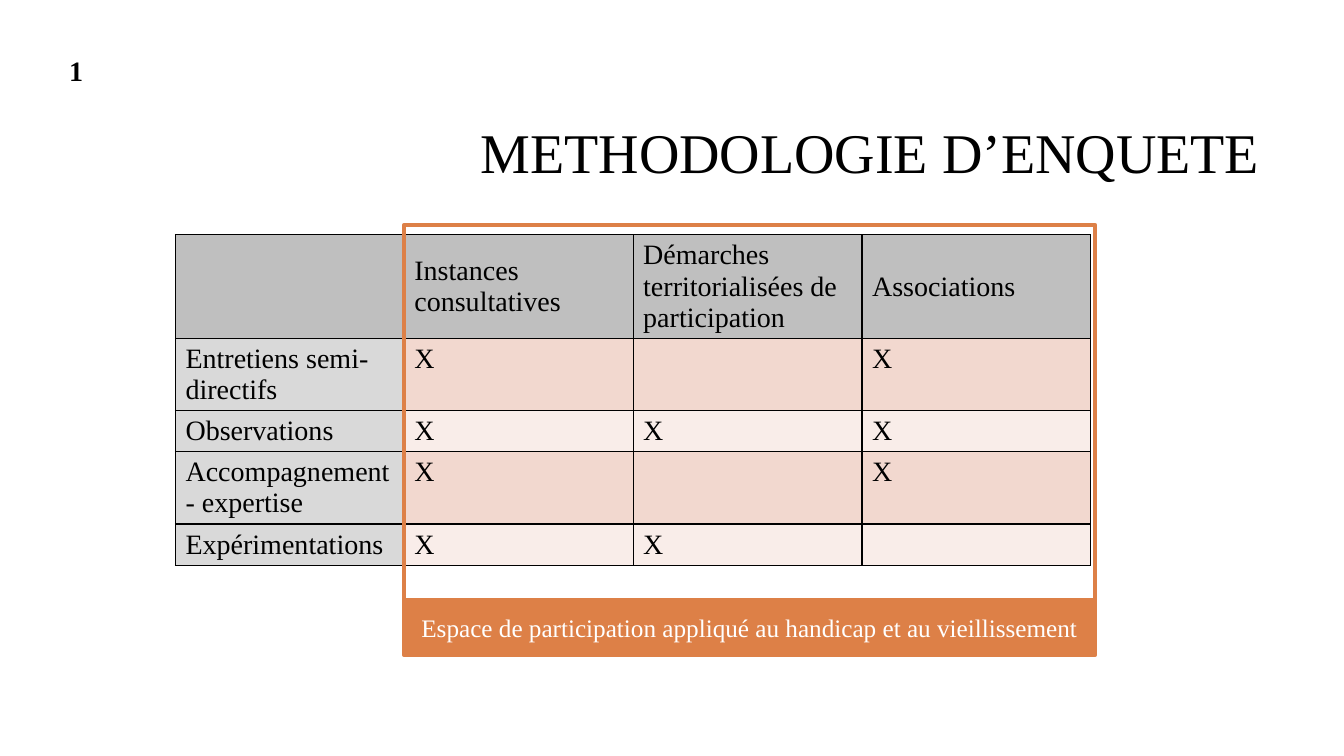
"""Build the survey methodology slide: a table of methods by field, framed in orange."""
from lxml.etree import SubElement
from pptx import Presentation
from pptx.dml.color import RGBColor
from pptx.enum.shapes import MSO_SHAPE
from pptx.enum.text import MSO_ANCHOR, PP_ALIGN
from pptx.oxml.ns import qn
from pptx.util import Inches, Pt

HEX = {"black": "000000", "white": "FFFFFF", "orange": "DD8047", "head": "BFBFBF",
       "side": "D9D9D9", "odd": "F2D8CF", "even": "F9EDE9"}
COL, ROW = Inches(2.27), Inches(0.41)
LEFT, TOP = Inches(1.74), Inches(2.33)
GRID = [
    ["", "Instances consultatives", "Démarches territorialisées de participation", "Associations"],
    ["Entretiens semi-directifs", "X", "", "X"],
    ["Observations", "X", "X", "X"],
    ["Accompagnement - expertise", "X", "", "X"],
    ["Expérimentations", "X", "X", ""],
]


def write(frame, text, size, color="black", align=None, bold=False):
    para = frame.paragraphs[0]
    para.alignment = align
    run = para.add_run()
    run.text = text
    font = run.font
    font.name, font.size, font.bold = "Times New Roman", Pt(size), bold
    font.color.rgb = RGBColor.from_string(HEX[color])
    return para


def draw(shapes, kind, box, line, width, fill=None):
    shape = shapes.add_shape(kind, *box)
    shape.shadow.inherit = False
    shape.line.color.rgb = RGBColor.from_string(HEX[line])
    shape.line.width = Pt(width)
    if fill:
        shape.fill.solid()
        shape.fill.fore_color.rgb = RGBColor.from_string(HEX[fill])
    else:
        shape.fill.background()
    shape.text_frame.word_wrap = True
    shape.text_frame.vertical_anchor = MSO_ANCHOR.MIDDLE
    return shape


deck = Presentation()
deck.slide_width, deck.slide_height = Inches(13.33), Inches(7.5)
slide = deck.slides.add_slide(deck.slide_layouts[5])

title = slide.shapes.title
title.left, title.top = Inches(3.17), Inches(0.84)
title.width, title.height = Inches(9.42), Inches(1.41)
title.text_frame.vertical_anchor = MSO_ANCHOR.MIDDLE
write(title.text_frame, "METHODOLOGIE D’ENQUETE", 40, align=PP_ALIGN.RIGHT).line_spacing = 0.9

rows, cols = len(GRID), len(GRID[0])
table = slide.shapes.add_table(rows, cols, LEFT, TOP, cols * COL, rows * ROW).table
table.first_row = table.horz_banding = False
for r, line in enumerate(GRID):
    table.rows[r].height = ROW
    for c, text in enumerate(line):
        cell = table.cell(r, c)
        props = cell._tc.get_or_add_tcPr()
        for side in ("a:lnL", "a:lnR", "a:lnT", "a:lnB"):
            edge = SubElement(props, qn(side), w=str(Pt(1)))
            paint = SubElement(edge, qn("a:solidFill"))
            SubElement(paint, qn("a:srgbClr"), val=HEX["black"])
        tone = "head" if r == 0 else "side" if c == 0 else "odd" if r % 2 else "even"
        cell.fill.solid()
        cell.fill.fore_color.rgb = RGBColor.from_string(HEX[tone])
        cell.vertical_anchor = MSO_ANCHOR.MIDDLE if r == 0 else MSO_ANCHOR.TOP
        if text:
            write(cell.text_frame, text, 20)

left, top, width = LEFT + COL, Inches(2.23), Inches(6.85)
tall, low = Inches(3.72), Inches(0.55)
group = slide.shapes.add_group_shape()
draw(group.shapes, MSO_SHAPE.RECTANGLE, (left, top, width, tall), "orange", 3)
label = draw(group.shapes, MSO_SHAPE.RECTANGLE, (left, top + tall, width, low),
             "orange", 3, "orange")
write(label.text_frame, "Espace de participation appliqué au handicap et au vieillissement",
      18, "white", PP_ALIGN.CENTER)

box = [Inches(n) for n in (0.34, 0.27, 0.83, 0.86)]
badge = draw(slide.shapes, MSO_SHAPE.OVAL, box, "white", 1, "white")
write(badge.text_frame, "1", 20, align=PP_ALIGN.CENTER, bold=True)

deck.save("out.pptx")
